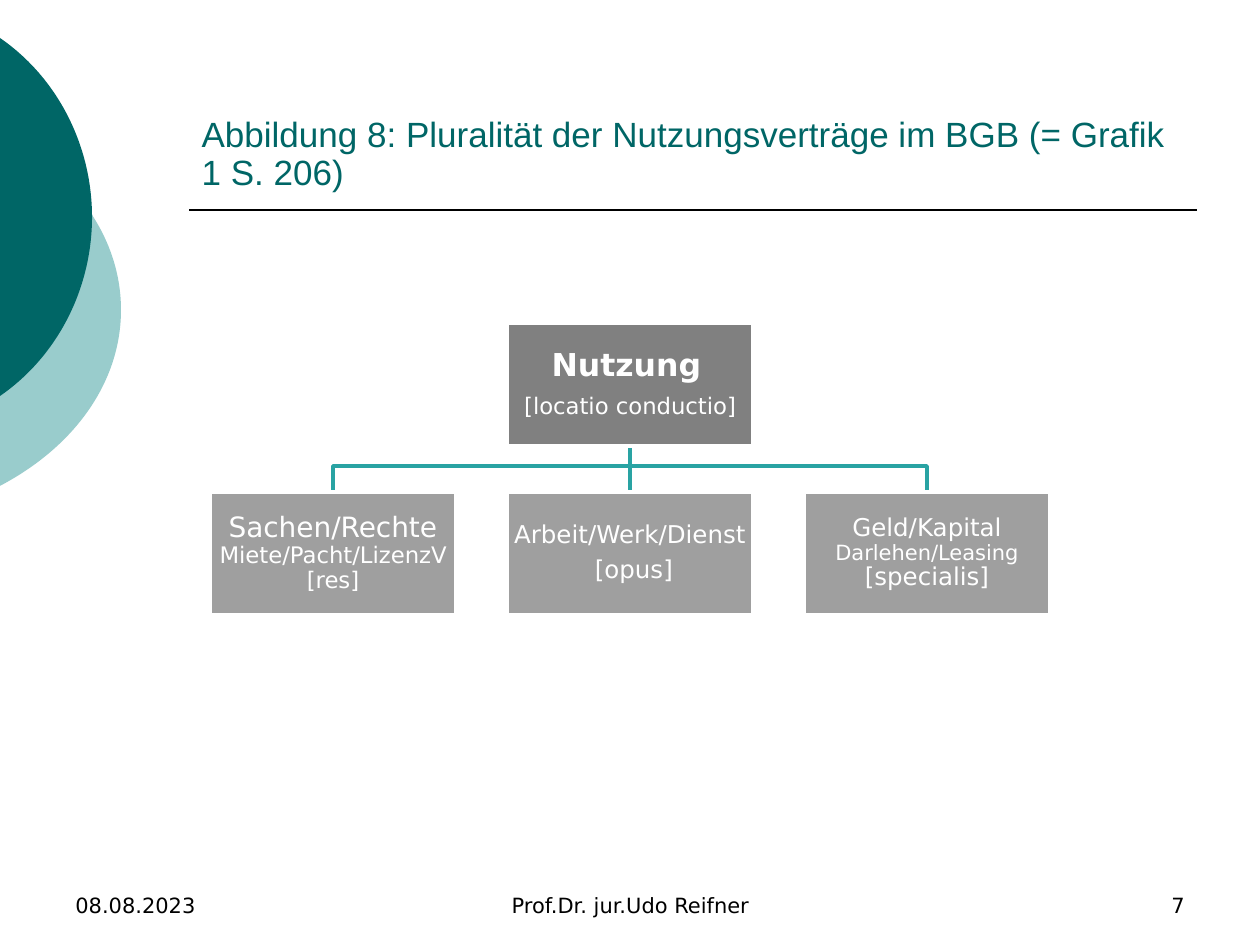
"""Build the slide on the kinds of use contract as a small tree."""
from pptx import Presentation
from pptx.dml.color import RGBColor
from pptx.enum.shapes import MSO_CONNECTOR as Conn, MSO_SHAPE as Kind
from pptx.enum.text import MSO_ANCHOR as Anchor, MSO_AUTO_SIZE as Fit, PP_ALIGN as Align
from pptx.oxml.ns import qn
from pptx.util import Emu, Pt
from lxml import etree


def px(n):
    return Emu(round(n * 914400 / 126))


def rgb(code):
    return RGBColor.from_string(code)


deck = Presentation()
deck.slide_width, deck.slide_height = px(1260), px(945)
slide = deck.slides.add_slide(deck.slide_layouts[5])
shapes = slide.shapes
SANS, TEAL, LINK = "DejaVu Sans", "006666", "29A3A3"

forms = [
    ((-446, 95, 567, 431), "99CCCC", None,
     [("moveTo", [(0, 134)]), ("cubicBezTo", [(76, 174), (121, 239), (121, 310)]),
      ("cubicBezTo", [(121, 381), (76, 446), (0, 486)]), ("close", [])]),
    ((-334, 0, 426, 435), TEAL, None,
     [("moveTo", [(0, 38)]), ("cubicBezTo", [(58, 78), (92, 146), (92, 217)]),
      ("cubicBezTo", [(92, 288), (58, 356), (0, 396)]), ("close", [])]),
    ((624, 446, 12, 46), None, LINK, [("moveTo", [(630, 446)]), ("lnTo", [(630, 492)])]),
]
for left, end in ((630, 927), (333, 333)):
    forms.append(((left, 446, 297, 46), None, LINK,
                  [("moveTo", [(630, 446)]), ("lnTo", [(630, 466)]),
                   ("lnTo", [(end, 466)]), ("lnTo", [(end, 492)])]))

for (x, y, wide, high), fill, tint, steps in forms:
    draw = shapes.build_freeform(px(x), px(y), scale=1.0)
    draw.add_line_segments([(px(x + wide), px(y + high))], close=False)
    form = draw.convert_to_shape()
    form.shadow.inherit = False
    track = form._element.spPr.find(".//" + qn("a:path"))
    for old in list(track):
        track.remove(old)
    track.set("w", str(px(wide)))
    track.set("h", str(px(high)))
    for verb, dots in steps:
        step = etree.SubElement(track, qn("a:" + verb))
        for dx, dy in dots:
            etree.SubElement(step, qn("a:pt"), x=str(px(dx - x)), y=str(px(dy - y)))
    if fill:
        form.fill.solid()
        form.fill.fore_color.rgb = rgb(fill)
        form.line.fill.background()
    else:
        form.fill.background()
        form.line.color.rgb, form.line.width = rgb(tint), Pt(2)

rule = shapes.add_connector(Conn.STRAIGHT, px(189), px(210), px(1197), px(210))
rule.line.color.rgb, rule.line.width = rgb("000000"), Pt(1)
etree.SubElement(rule._element.spPr, qn("a:effectLst"))

title = shapes.title
title.left, title.top, title.width, title.height = px(189), px(42), px(1008), px(157)
frame = title.text_frame
frame.auto_size = Fit.NONE
frame.word_wrap = True
frame.vertical_anchor = Anchor.BOTTOM
para = frame.paragraphs[0]
para.alignment, para.line_spacing = Align.LEFT, 0.9
run = para.add_run()
run.text = "Abbildung 8: Pluralität der Nutzungsverträge im BGB (= Grafik 1 S. 206)"
run.font.name, run.font.size = "Arial", Pt(20)
run.font.color.rgb = rgb(TEAL)

nodes = [
    (507, 323, "808080", [[("Nutzung", 18, True), (" ", 13, False)],
                          [("[locatio conductio]", 13, False)]]),
    (210, 492, "9F9F9F", [[("Sachen/Rechte", 16, False),
                           (" Miete/Pacht/LizenzV [res]", 13, False)]]),
    (507, 492, "9F9F9F", [[("Arbeit/Werk/Dienst", 14, False)], [(" [opus]", 14, False)]]),
    (804, 492, "9F9F9F", [[("Geld/Kapital ", 14, False), ("Darlehen/Leasing ", 12, False),
                           ("[specialis]", 14, False)]]),
]
for x, y, fill, paras in nodes:
    box = shapes.add_shape(Kind.RECTANGLE, px(x), px(y), px(246), px(123))
    box.shadow.inherit = False
    box.fill.solid()
    box.fill.fore_color.rgb = rgb(fill)
    box.line.color.rgb, box.line.width = rgb("FFFFFF"), Pt(2)
    frame = box.text_frame
    frame.word_wrap = True
    frame.vertical_anchor = Anchor.MIDDLE
    frame.margin_left = frame.margin_right = frame.margin_top = frame.margin_bottom = px(1)
    for i, runs in enumerate(paras):
        para = frame.add_paragraph() if i else frame.paragraphs[0]
        para.alignment, para.line_spacing, para.space_after = Align.CENTER, 0.9, Pt(5)
        gap = para._p.pPr.find(qn("a:spcAft"))
        gap.remove(gap[0])
        etree.SubElement(gap, qn("a:spcPct"), val="35000")
        for text, size, bold in runs:
            run = para.add_run()
            run.text = text
            run.font.name, run.font.size, run.font.bold = SANS, Pt(size), bold
            run.font.color.rgb = rgb("FFFFFF")

feet = [
    (63, 294, Align.LEFT, "08.08.2023"),
    (431, 399, Align.CENTER, "Prof.Dr. jur.Udo Reifner"),
    (903, 294, Align.RIGHT, "7"),
]
for x, width, side, text in feet:
    frame = shapes.add_textbox(px(x), px(861), px(width), px(63)).text_frame
    frame.word_wrap = True
    frame.vertical_anchor = Anchor.BOTTOM
    para = frame.paragraphs[0]
    para.alignment, para.space_after = side, Pt(6)
    run = para.add_run()
    run.text = text
    run.font.name, run.font.size = SANS, Pt(12)
    run.font.color.rgb = rgb("000000")

deck.save("out.pptx")
